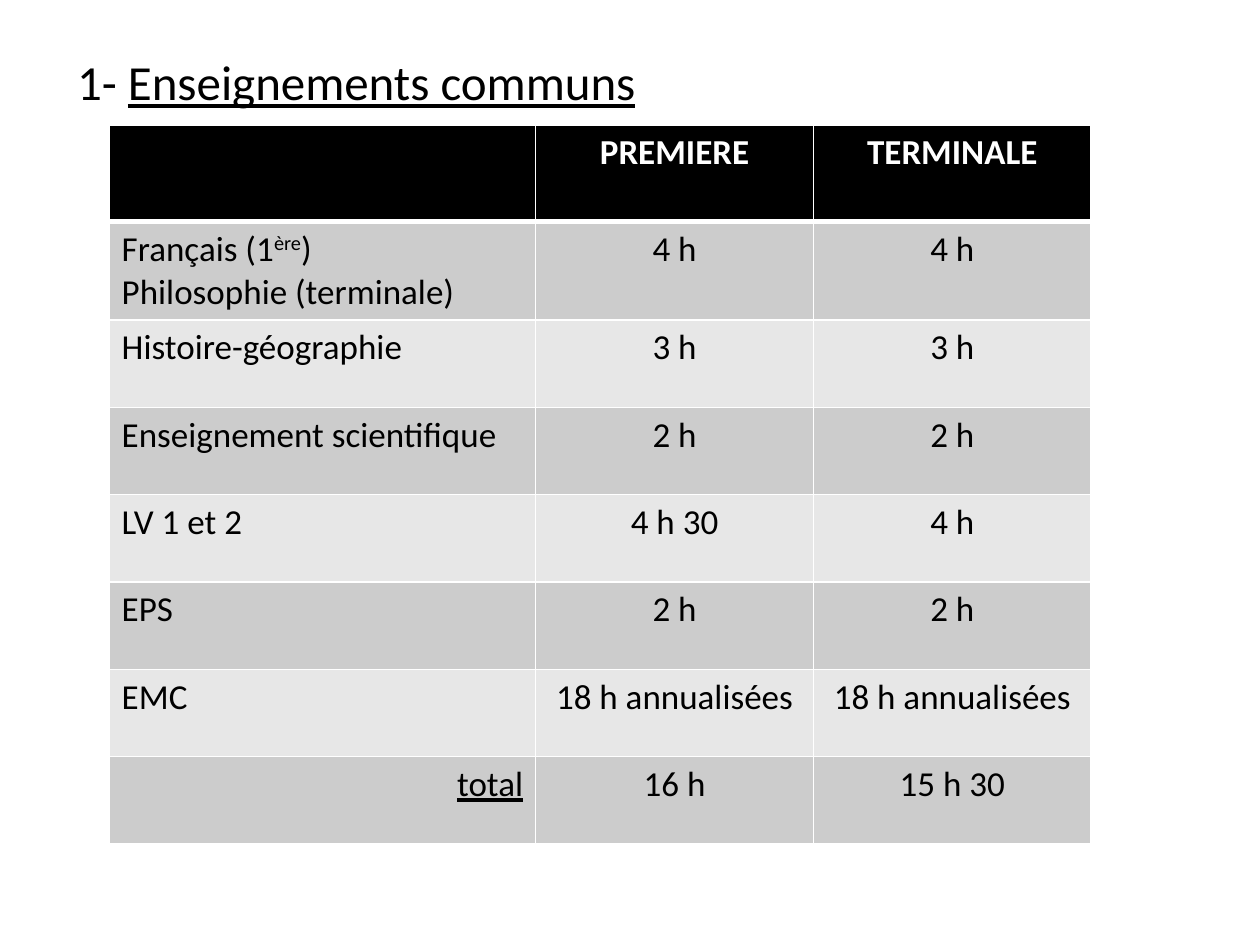
from dataclasses import dataclass

import pptx
import pptx.dml.color
import pptx.enum.text
import pptx.oxml
import pptx.oxml.ns
import pptx.util
from pptx.util import Cm

COLORS = {"text": "000000", "header": "000000", "white": "FFFFFF",
          "odd": "CCCCCC", "even": "E7E7E7"}
ALIGN = pptx.enum.text.PP_ALIGN
FONT = "Calibri"


@dataclass
class Run:
    text: str
    underline: bool = False
    superscript: bool = False


@dataclass
class Row:
    label: list  # one list of runs per paragraph
    premiere: str
    terminale: str
    label_align: ALIGN = ALIGN.LEFT


ROWS = [
    Row([], "PREMIERE", "TERMINALE"),
    Row([[Run("Français (1"), Run("ère", superscript=True), Run(")")],
         [Run("Philosophie (terminale)")]], "4 h", "4 h"),
    Row([[Run("Histoire-géographie")]], "3 h", "3 h"),
    Row([[Run("Enseignement scientifique")]], "2 h", "2 h"),
    Row([[Run("LV 1 et 2")]], "4 h 30", "4 h"),
    Row([[Run("EPS")]], "2 h", "2 h"),
    Row([[Run("EMC")]], "18 h annualisées", "18 h annualisées"),
    Row([[Run("total", underline=True)]], "16 h", "15 h 30", ALIGN.RIGHT),
]


def rgb(name: str) -> pptx.dml.color.RGBColor:
    return pptx.dml.color.RGBColor.from_string(COLORS[name])


def write(tf, paragraphs: list, size: float, color: str = "text",
          bold: bool = False, align: ALIGN = ALIGN.LEFT) -> None:
    for i, runs in enumerate(paragraphs):
        p = tf.paragraphs[0] if i == 0 else tf.add_paragraph()
        p.alignment = align
        for run in runs:
            r = p.add_run()
            r.text = run.text
            fmt = {"name": FONT, "size": pptx.util.Pt(size), "bold": bold,
                   "underline": run.underline}
            for key, value in fmt.items():
                setattr(r.font, key, value)
            r.font.color.rgb = rgb(color)
            if run.superscript:
                r.font._element.set("baseline", "30000")


def set_borders(cell, widths: dict) -> None:
    """Add white cell borders; widths in points by side, in L, R, T, B order."""
    tc_pr = cell._tc.get_or_add_tcPr()
    for i, (side, width) in enumerate(widths.items()):
        tc_pr.insert(i, pptx.oxml.parse_xml(
            f'<a:ln{side} {pptx.oxml.ns.nsdecls("a")} w="{pptx.util.Pt(width)}">'
            f'<a:solidFill><a:srgbClr val="{COLORS["white"]}"/></a:solidFill>'
            f'</a:ln{side}>'))


def fill_row(table, index: int, row: Row) -> None:
    header = index == 0
    fill = "header" if header else "odd" if index % 2 else "even"
    color = "white" if header else "text"
    contents = [(row.label, row.label_align)]
    contents += [([[Run(t)]], ALIGN.CENTER) for t in (row.premiere, row.terminale)]
    for col, (paragraphs, align) in enumerate(contents):
        cell = table.cell(index, col)
        cell.fill.solid()
        cell.fill.fore_color.rgb = rgb(fill)
        set_borders(cell, {"L": 1, "R": 1, "T": 3 if index == 1 else 1,
                           "B": 3 if header else 1})
        write(cell.text_frame, paragraphs, 20, color, header, align)


def main() -> None:
    prs = pptx.Presentation()
    prs.slide_width, prs.slide_height = Cm(25.4), Cm(19.05)
    s = prs.slides.add_slide(prs.slide_layouts[5])

    # Title
    sp = s.shapes.title
    sp.left, sp.top, sp.width, sp.height = Cm(1.3), Cm(0.92), Cm(23.4), Cm(1.45)
    tf = sp.text_frame
    tf.word_wrap = True
    tf.auto_size = pptx.enum.text.MSO_AUTO_SIZE.NONE
    tf.vertical_anchor = pptx.enum.text.MSO_ANCHOR.TOP
    write(tf, [[Run("1- "), Run("Enseignements communs", underline=True)]], 28)

    # Table of weekly hours
    widths = [Cm(8.6), Cm(5.6), Cm(5.6)]
    heights = [Cm(1.95)] + [Cm(1.76)] * (len(ROWS) - 1)
    table = s.shapes.add_table(len(ROWS), len(widths), Cm(2.2), Cm(2.52),
                               sum(widths), sum(heights)).table
    for column, width in zip(table.columns, widths):
        column.width = width
    for i, (row, height) in enumerate(zip(ROWS, heights)):
        table.rows[i].height = height
        fill_row(table, i, row)

    prs.save("out.pptx")


if __name__ == "__main__":
    main()
